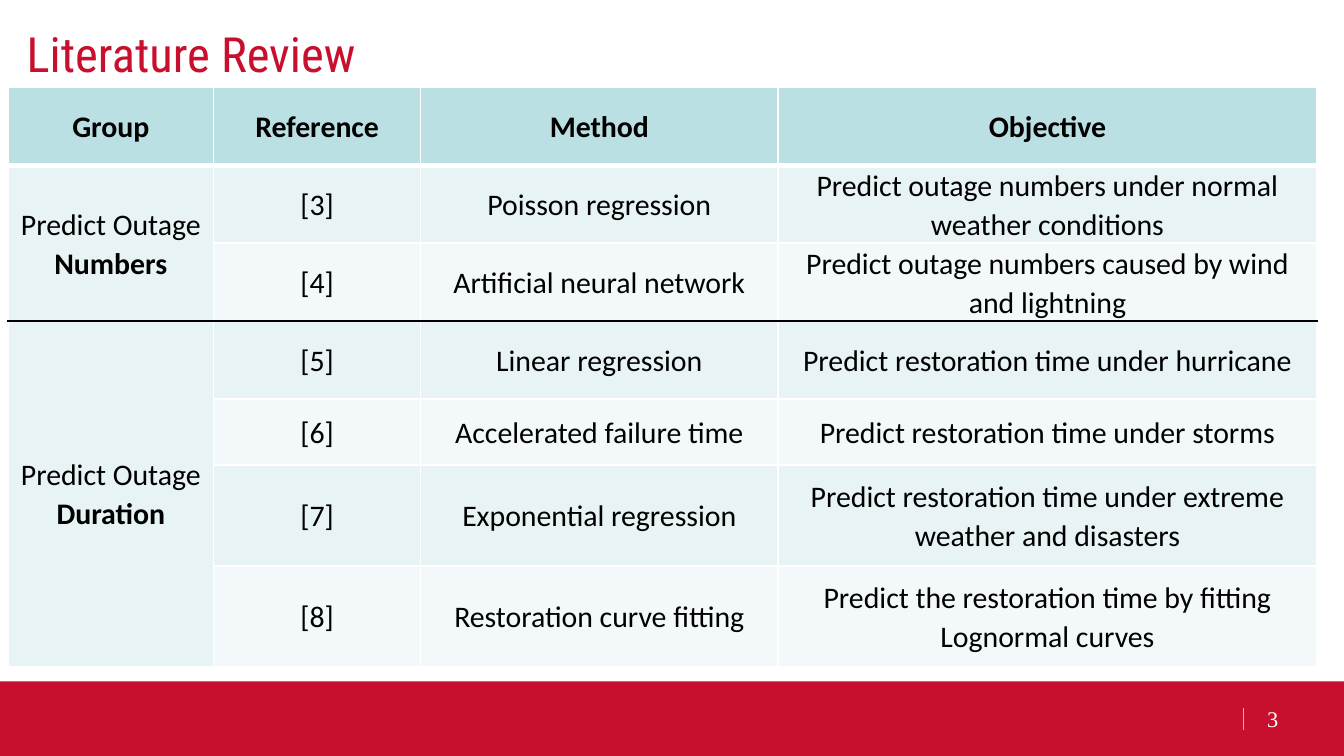
from dataclasses import dataclass

from lxml import etree
from pptx import Presentation
from pptx.dml.color import RGBColor
from pptx.enum.shapes import MSO_CONNECTOR, MSO_SHAPE
from pptx.enum.text import MSO_ANCHOR, PP_ALIGN
from pptx.oxml.ns import qn
from pptx.util import Inches, Pt

RECTANGLE = MSO_SHAPE.RECTANGLE
STRAIGHT = MSO_CONNECTOR.STRAIGHT
MIDDLE = MSO_ANCHOR.MIDDLE
CENTER = PP_ALIGN.CENTER


@dataclass(frozen=True)
class Theme:
    red: str = "C8102E"
    gold: str = "F1BE48"
    white: str = "FFFFFF"
    black: str = "000000"
    header: str = "BBE0E3"
    band_dark: str = "E7F3F4"
    band_light: str = "F3F9FA"
    title_font: str = "Roboto Condensed"
    body_font: str = "Calibri"
    number_font: str = "Times New Roman"
    title_size: int = 26
    body_size: int = 16
    number_size: int = 12


theme = Theme()


def style_run(run, font_name, size, color, bold=False):
    run.font.name = font_name
    run.font.size = Pt(size)
    run.font.bold = bold
    run.font.color.rgb = RGBColor.from_string(color)


def set_borders(cell, top, bottom):
    """Draw white sides; top and bottom are (colour, points) pairs."""
    side = (theme.white, 1)
    properties = cell._tc.get_or_add_tcPr()
    edges = (("a:lnL", side), ("a:lnR", side), ("a:lnT", top), ("a:lnB", bottom))
    for position, (tag, (color, points)) in enumerate(edges):
        line = etree.Element(qn(tag), w=str(Pt(points)))
        fill = etree.SubElement(line, qn("a:solidFill"))
        etree.SubElement(fill, qn("a:srgbClr"), val=color)
        properties.insert(position, line)


# Widescreen 16:9 slide
presentation = Presentation()
presentation.slide_width = Inches(10)
presentation.slide_height = Inches(10) * 9 // 16
slide = presentation.slides.add_slide(presentation.slide_layouts[6])

# Footer band with divider
footer_top = Inches(5.07)
footer = slide.shapes.add_shape(
    RECTANGLE, 0, footer_top, Inches(10), presentation.slide_height - footer_top)
footer.shadow.inherit = False
footer.fill.solid()
footer.fill.fore_color.rgb = RGBColor.from_string(theme.red)
footer.line.fill.background()

divider = slide.shapes.add_connector(
    STRAIGHT, Inches(9.25), Inches(5.27), Inches(9.25), Inches(5.43))
divider.line.color.rgb = RGBColor.from_string(theme.gold)
divider.line.width = Pt(0.75)
etree.SubElement(divider._element.spPr, qn("a:effectLst"))

# Title and page number
labels = [
    ("Literature Review", (0.1, 0.14, 9.49, 0.51),
     theme.title_font, theme.title_size, theme.red),
    ("3", (9.33, 5.2, 0.58, 0.3),
     theme.number_font, theme.number_size, theme.white),
]
for text, box, font_name, size, color in labels:
    label = slide.shapes.add_textbox(*map(Inches, box))
    text_frame = label.text_frame
    text_frame.word_wrap = True
    text_frame.vertical_anchor = MIDDLE
    text_frame.text = text
    style_run(text_frame.paragraphs[0].runs[0], font_name, size, color)

# Literature table: a group cell spans the rows of its references
headings = ["Group", "Reference", "Method", "Objective"]
groups = [
    ("Numbers", [
        ("[3]", "Poisson regression",
         "Predict outage numbers under normal weather conditions"),
        ("[4]", "Artificial neural network",
         "Predict outage numbers caused by wind and lightning"),
    ]),
    ("Duration", [
        ("[5]", "Linear regression", "Predict restoration time under hurricane"),
        ("[6]", "Accelerated failure time", "Predict restoration time under storms"),
        ("[7]", "Exponential regression",
         "Predict restoration time under extreme weather and disasters"),
        ("[8]", "Restoration curve fitting",
         "Predict the restoration time by fitting Lognormal curves"),
    ]),
]
column_widths = [1.53, 1.54, 2.66, 4.01]
row_heights = [0.58, 0.58, 0.58, 0.58, 0.49, 0.75, 0.75]

table = slide.shapes.add_table(
    len(row_heights), len(column_widths), Inches(0.06), Inches(0.65),
    Inches(sum(column_widths)), Inches(sum(row_heights))).table
for column, width in zip(table.columns, column_widths):
    column.width = Inches(width)
for row, height in zip(table.rows, row_heights):
    row.height = Inches(height)

# Cell wording
for column_index, heading in enumerate(headings):
    table.cell(0, column_index).text = heading
first_row = 1
group_starts = []
for group_name, studies in groups:
    group_starts.append(first_row)
    group_cell = table.cell(first_row, 0)
    group_cell.merge(table.cell(first_row + len(studies) - 1, 0))
    paragraph = group_cell.text_frame.paragraphs[0]
    for text in ("Predict Outage ", group_name):
        paragraph.add_run().text = text
    for row_index, study in enumerate(studies, first_row):
        for column_index, text in enumerate(study, 1):
            table.cell(row_index, column_index).text = text
    first_row += len(studies)

# Cell look: banded rows, heavy header rule, black rule between groups
thin = (theme.white, 1)
rules = {1: (theme.white, 3), group_starts[1]: (theme.black, 1)}
for row_index in range(len(row_heights)):
    for column_index in range(len(column_widths)):
        cell = table.cell(row_index, column_index)
        if row_index == 0:
            color = theme.header
        elif column_index == 0 or row_index % 2:
            color = theme.band_dark
        else:
            color = theme.band_light
        cell.fill.solid()
        cell.fill.fore_color.rgb = RGBColor.from_string(color)
        set_borders(cell, rules.get(row_index, thin), rules.get(row_index + 1, thin))
        cell.vertical_anchor = MIDDLE
        cell.margin_left = cell.margin_right = Inches(0.07)
        cell.margin_top = cell.margin_bottom = 0
        paragraph = cell.text_frame.paragraphs[0]
        paragraph.alignment = CENTER
        paragraph.line_spacing = 1.07
        for run_index, run in enumerate(paragraph.runs):
            bold = row_index == 0 or run_index == 1
            style_run(run, theme.body_font, theme.body_size, theme.black, bold)

presentation.save("out.pptx")
